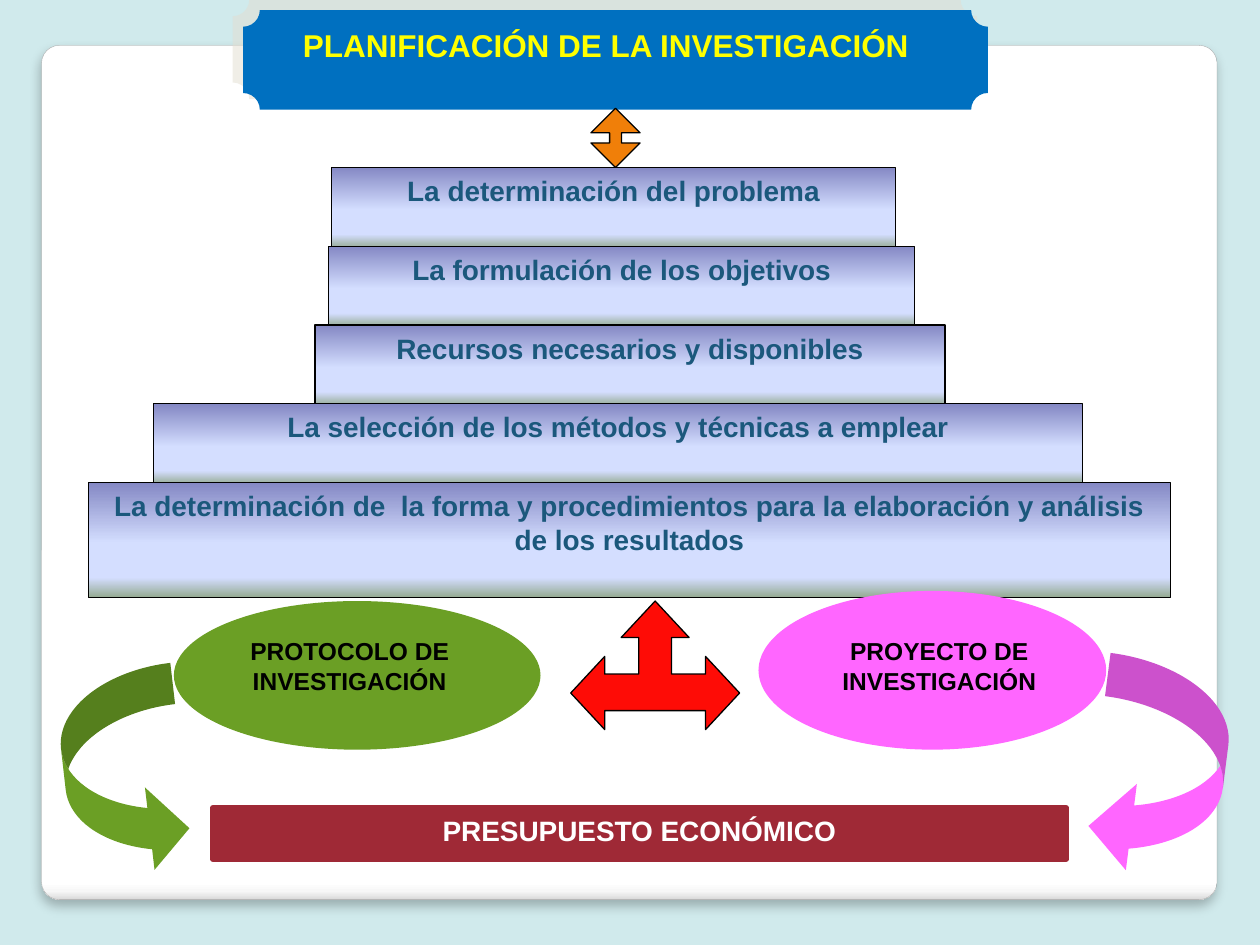
from lxml import etree
from pptx import Presentation
from pptx.dml.color import RGBColor
from pptx.enum import shapes, text
from pptx.oxml.ns import qn
from pptx import util as u

COLORS = {
    "background": "D0EAEC", "panel_line": "A4A4A4", "black": "000000", "white": "FFFFFF",
    "banner": "0070C0", "banner_shadow": "E3DED1", "title": "FFFF00", "orange": "F07F09",
    "step_text": "1B587C", "red": "FE0C06", "green": "6B9F25", "pink": "FF66FF",
    "budget": "9F2936",
}
PANEL_STOPS = [(0, "FFFFFF"), (98, "FFFFFF"), (99, "F7F7F7"), (100, "DADADA")]
STEP_STOPS = [(0, "8488C4"), (53, "D4DEFF"), (83, "D4DEFF"), (100, "96AB94")]
STEPS = [
    (2.63, 4.48, 0.64, "La determinación del problema"),
    (2.61, 4.65, 0.64, "La formulación de los objetivos"),
    (2.5, 5, 0.64, "Recursos necesarios y disponibles"),
    (1.22, 7.37, 0.64, "La selección de los métodos y técnicas a emplear"),
    (0.7, 8.59, 0.91, "La determinación de  la forma y procedimientos para la "
                      "elaboración y análisis de los resultados"),
]
STEP_TOP, STEP_PITCH = 1.33, 0.625


def color(name):
    return RGBColor.from_string(COLORS[name])


class SlideBuilder:
    font = "Arial"

    def __init__(self, page):
        self.page = page

    def background(self, name):
        fill = self.page.background.fill
        fill.solid()
        fill.fore_color.rgb = color(name)

    def paint(self, shape, fill, line=None, width=0.75):
        shape.shadow.inherit = False
        if isinstance(fill, list):
            self.gradient(shape, fill)
        else:
            shape.fill.solid()
            shape.fill.fore_color.rgb = color(fill)
        if line:
            shape.line.color.rgb = color(line)
            shape.line.width = u.Pt(width)
        else:
            shape.line.fill.background()

    def gradient(self, shape, stops):
        shape.fill.gradient()
        shape.fill.gradient_angle = 270
        stop_list = shape.element.spPr.find(".//" + qn("a:gsLst"))
        for stop in list(stop_list):
            stop_list.remove(stop)
        for position, value in stops:
            stop = etree.SubElement(stop_list, qn("a:gs"), pos=str(position * 1000))
            etree.SubElement(stop, qn("a:srgbClr"), val=value)

    def shadow(self, shape, name, alpha, blur, distance, angle):
        effects = shape.element.spPr.find(qn("a:effectLst"))
        outer = etree.SubElement(
            effects, qn("a:outerShdw"), blurRad=str(u.Pt(blur)), dist=str(u.Pt(distance)),
            dir=str(angle * 60000), algn="ctr", rotWithShape="0")
        tint = etree.SubElement(outer, qn("a:srgbClr"), val=COLORS[name])
        etree.SubElement(tint, qn("a:alpha"), val=str(alpha * 1000))

    def shape(self, kind, at, fill, line=None, width=0.75, adjust=(), rotation=0):
        shape = self.page.shapes.add_shape(kind, *map(u.Inches, at))
        for index, value in enumerate(adjust):
            shape.adjustments[index] = value
        shape.rotation = rotation
        self.paint(shape, fill, line, width)
        return shape

    def caption(self, shape, words, size, name):
        frame = shape.text_frame
        frame.text = words
        frame.word_wrap = True
        frame.auto_size = text.MSO_AUTO_SIZE.NONE
        frame.vertical_anchor = text.MSO_ANCHOR.TOP
        para = frame.paragraphs[0]
        para.alignment = text.PP_ALIGN.CENTER
        for span in para.runs:
            span.font.name = self.font
            span.font.size = u.Pt(size)
            span.font.bold = True
            span.font.color.rgb = color(name)

    def label(self, at, words, size, name):
        box = self.page.shapes.add_textbox(*map(u.Inches, at))
        self.caption(box, words, size, name)

    def title(self, at, words, size, name):
        title = self.page.shapes.title
        title.left, title.top, title.width, title.height = map(u.Inches, at)
        self.caption(title, words, size, name)
        title.element.getparent().append(title.element)

    def triple_arrow(self, center, top, fill, line):
        right = [(0, 0), (0.27, 0.29), (0.13, 0.29), (0.13, 0.58), (0.4, 0.58),
                 (0.4, 0.44), (0.67, 0.73), (0.4, 1.02), (0.4, 0.87)]
        left = [(-x, y) for x, y in reversed(right[1:])]
        points = [(u.Inches(center + x), u.Inches(top + y)) for x, y in right + left]
        builder = self.page.shapes.build_freeform(*points[0])
        builder.add_line_segments(points[1:], close=True)
        self.paint(builder.convert_to_shape(), fill, line)


def main():
    deck = Presentation()
    deck.slide_width, deck.slide_height = u.Inches(10), u.Inches(7.5)
    slide = SlideBuilder(deck.slides.add_slide(deck.slide_layouts[5]))
    kinds = shapes.MSO_SHAPE

    slide.background("background")
    panel = slide.shape(kinds.ROUNDED_RECTANGLE, (0.33, 0.36, 9.33, 6.78), PANEL_STOPS,
                        "panel_line", 0.16, [0.021])
    slide.shadow(panel, "black", 25, 6, 4, 90)
    banner = slide.shape(kinds.PLAQUE, (1.93, 0.08, 5.91, 0.79), "banner", adjust=[0.167])
    slide.shadow(banner, "banner_shadow", 50, 0, 8.5, 225)
    slide.title((1.88, 0.16, 5.86, 0.71), "PLANIFICACIÓN DE LA INVESTIGACIÓN", 18, "title")
    slide.shape(kinds.UP_DOWN_ARROW, (4.69, 0.86, 0.39, 0.47), "orange", "black",
                adjust=[0.5, 0.241])

    for index, (left, width, height, words) in enumerate(STEPS):
        at = (left, STEP_TOP + index * STEP_PITCH, width, height)
        step = slide.shape(kinds.RECTANGLE, at, STEP_STOPS, "black")
        slide.caption(step, words, 16, "step_text")

    slide.triple_arrow(5.2, 4.77, "red", "black")
    slide.shape(kinds.OVAL, (1.38, 4.77, 2.91, 1.18), "green")
    slide.shape(kinds.OVAL, (6.02, 4.69, 2.76, 1.26), "pink")
    slide.label((1.33, 5, 2.89, 0.57), "PROTOCOLO DE INVESTIGACIÓN", 14, "black")
    slide.label((5.96, 5, 2.99, 0.57), "PROYECTO DE INVESTIGACIÓN", 14, "black")

    budget = slide.shape(kinds.RECTANGLE, (1.69, 6.41, 6.77, 0.41), "budget", "budget", 3)
    slide.caption(budget, "PRESUPUESTO ECONÓMICO", 16, "white")
    slide.shape(kinds.CURVED_RIGHT_ARROW, (0.51, 5.31, 0.94, 1.65), "green",
                adjust=[0.35, 0.7, 0.333], rotation=353.4)
    slide.shape(kinds.CURVED_LEFT_ARROW, (8.7, 5.24, 1.02, 1.73), "pink",
                adjust=[0.339, 0.677, 0.333], rotation=7.3)
    deck.save("out.pptx")


if __name__ == "__main__":
    main()
